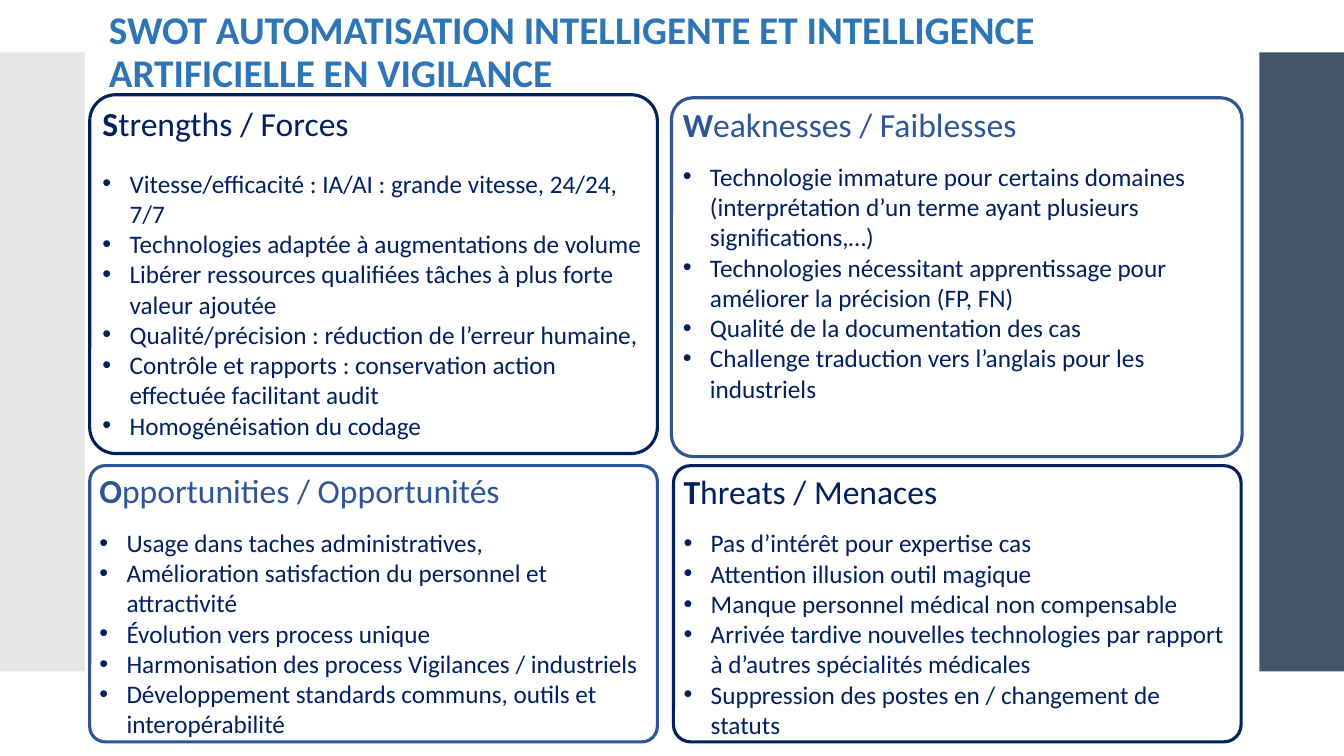
from lxml import etree
from pptx import Presentation
from pptx.dml.color import RGBColor
from pptx.enum import shapes, text
from pptx.oxml import ns
from pptx.util import Inches, Pt

NAVY, BLUE = "002060", "2F5597"
INDENT = Inches(0.27)


def add_paragraph(frame, *parts, first=False, size=18, color=NAVY, bullet=False,
                  before=0, after=0, spacing=1.0):
    """Add a left-aligned paragraph made of (words, bold) parts."""
    paragraph = frame.paragraphs[0] if first else frame.add_paragraph()
    if bullet:
        properties = paragraph._p.get_or_add_pPr()
        properties.set("marL", str(INDENT))
        properties.set("indent", str(-INDENT))
        etree.SubElement(properties, ns.qn("a:buFont")).set("typeface", "Arial")
        etree.SubElement(properties, ns.qn("a:buChar")).set("char", "•")
    paragraph.alignment = text.PP_ALIGN.LEFT
    paragraph.line_spacing = spacing
    paragraph.space_before, paragraph.space_after = Pt(before), Pt(after)
    for words, bold in parts:
        run = paragraph.add_run()
        run.text = words
        run.font.name, run.font.size, run.font.bold = "Calibri", Pt(size), bold
        run.font.color.rgb = RGBColor.from_string(color)


def set_frame(frame, side):
    """Wrap text from the top, with equal side margins in inches."""
    frame.word_wrap = True
    frame.vertical_anchor = text.MSO_ANCHOR.TOP
    frame.margin_left = frame.margin_right = Inches(side)
    frame.margin_top = frame.margin_bottom = 0


presentation = Presentation()
presentation.slide_width, presentation.slide_height = Inches(13.33), Inches(7.5)
slide = presentation.slides.add_slide(presentation.slide_layouts[6])

for left, color in ((12.49, "44546A"), (0, "E7E6E6")):
    band = slide.shapes.add_shape(shapes.MSO_SHAPE.RECTANGLE, Inches(left),
                                  Inches(0.52), Inches(0.84), Inches(6.14))
    band.shadow.inherit = False
    band.fill.solid()
    band.fill.fore_color.rgb = RGBColor.from_string(color)
    band.line.fill.background()

title = slide.shapes.add_textbox(Inches(1.08), Inches(0.11), Inches(11.06), Inches(0.94))
set_frame(title.text_frame, 0)
add_paragraph(title.text_frame,
              ("SWOT AUTOMATISATION INTELLIGENTE ET INTELLIGENCE ARTIFICIELLE EN VIGILANCE", True),
              first=True, size=28, color="2E75B6", spacing=0.9)

# Position, corner rounding, colour, space above the list, heading, points
quadrants = [
    ((0.89, 0.94, 5.63, 3.56), 0.073, NAVY, 6, "Strengths / Forces", [
        "Vitesse/efficacité : IA/AI : grande vitesse, 24/24, 7/7",
        "Technologies adaptée à augmentations de volume",
        "Libérer ressources qualifiées tâches à plus forte valeur ajoutée",
        "Qualité/précision : réduction de l’erreur humaine,",
        "Contrôle et rapports : conservation action effectuée facilitant audit",
        "Homogénéisation du codage"]),
    ((6.66, 0.97, 5.66, 3.56), 0.06, BLUE, 0, "Weaknesses / Faiblesses", [
        "Technologie immature pour certains domaines "
        "(interprétation d’un terme ayant plusieurs significations,…)",
        "Technologies nécessitant apprentissage pour améliorer la précision (FP, FN)",
        "Qualité de la documentation des cas",
        "Challenge traduction vers l’anglais pour les industriels"]),
    ((0.89, 4.62, 5.63, 2.74), 0.056, BLUE, 0, "Opportunities / Opportunités", [
        "Usage dans taches administratives,",
        "Amélioration satisfaction du personnel et attractivité",
        "Évolution vers process unique",
        "Harmonisation des process Vigilances / industriels",
        "Développement standards communs, outils et interopérabilité"]),
    ((6.68, 4.62, 5.63, 2.74), 0.062, NAVY, 0, "Threats / Menaces", [
        "Pas d’intérêt pour expertise cas",
        "Attention illusion outil magique",
        "Manque personnel médical non compensable",
        "Arrivée tardive nouvelles technologies par rapport à d’autres spécialités médicales",
        "Suppression des postes en / changement de statuts"]),
]
for position, rounding, color, gap, heading, points in quadrants:
    box = slide.shapes.add_shape(shapes.MSO_SHAPE.ROUNDED_RECTANGLE,
                                 *(Inches(length) for length in position))
    box.adjustments[0] = rounding
    box.shadow.inherit = False
    box.fill.background()
    box.line.color.rgb = RGBColor.from_string(color)
    box.line.width = Pt(2.25)
    frame = box.text_frame
    set_frame(frame, 0.05)
    add_paragraph(frame, (heading[0], True), (heading[1:], False),
                  first=True, size=24, color=color, after=12)
    for index, point in enumerate(points):
        add_paragraph(frame, (point, False), bullet=True, before=0 if index else gap)

presentation.save("out.pptx")
